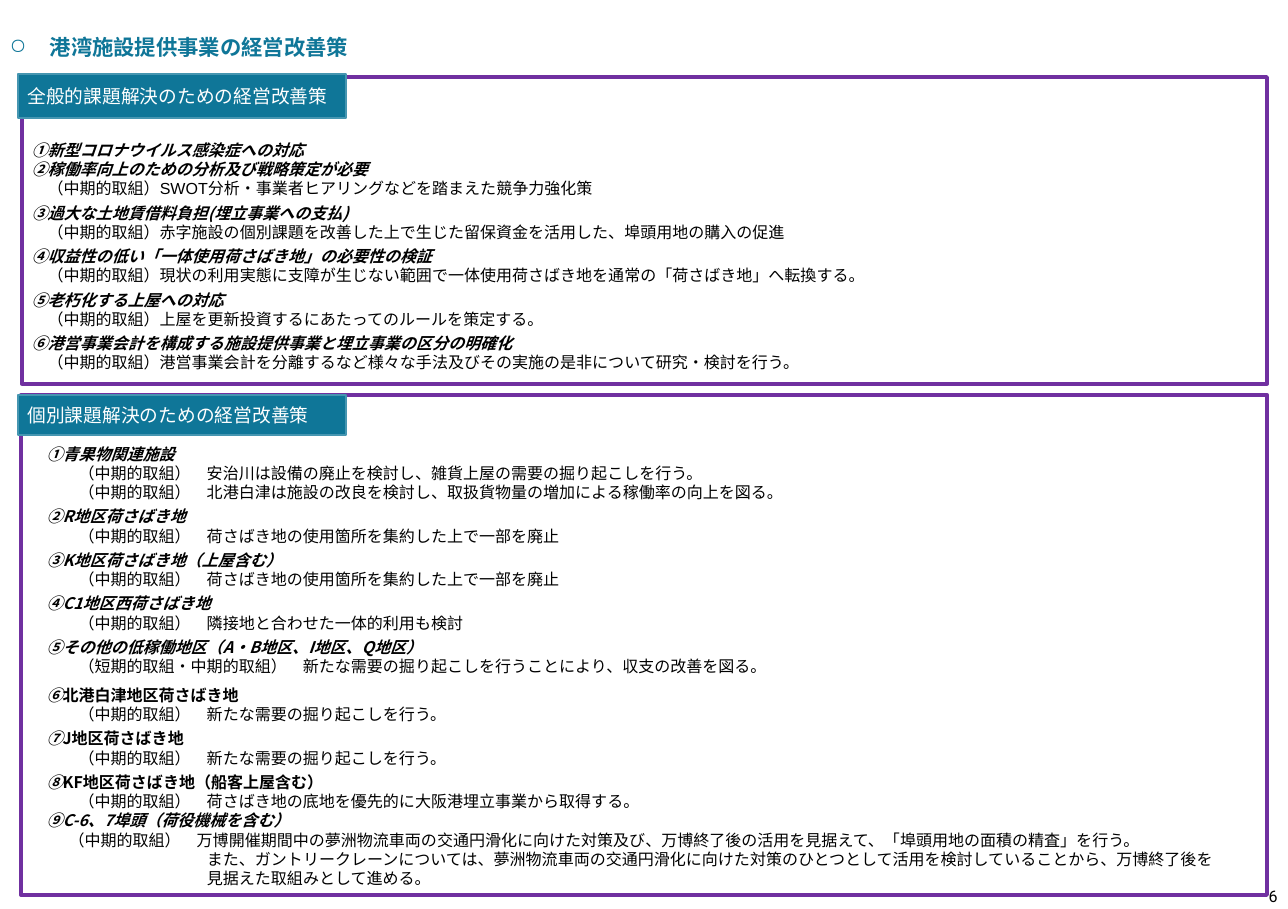
"""Build the slide on management measures for the port facility business."""
from dataclasses import dataclass

from lxml import etree
from pptx import Presentation
from pptx import util as u
from pptx.dml.color import RGBColor
from pptx.enum import shapes, text
from pptx.oxml import ns


@dataclass(frozen=True)
class Theme:
    teal: str = "0F7698"
    edge: str = "4696B1"
    frame: str = "7030A0"
    ink: str = "000000"
    white: str = "FFFFFF"
    head: str = "Roboto"
    body: str = "Arial"
    asian: str = "Noto Sans CJK JP"
    title: int = 16
    label: int = 14
    small: int = 12
    pitch: float = 14.45
    gap: float = 3.6


@dataclass(frozen=True)
class Kind:
    bold: bool = False
    slant: bool = False
    gaps: int = 0
    left: str = "act"


KINDS = {
    "item": Kind(True, True, 1, "item"),
    "next": Kind(True, True, 0, "item"),
    "plain": Kind(True, False, 1, "item"),
    "part": Kind(True, False, 2, "item"),
    "act": Kind(),
    "last": Kind(left="last"),
    "more": Kind(left="more"),
}

GENERAL = [
    ("next", "①新型コロナウイルス感染症への対応"),
    ("next", "②稼働率向上のための分析及び戦略策定が必要"),
    ("act", "（中期的取組）SWOT分析・事業者ヒアリングなどを踏まえた競争力強化策"),
    ("item", "③過大な土地賃借料負担(埋立事業への支払)"),
    ("act", "（中期的取組）赤字施設の個別課題を改善した上で生じた留保資金を活用した、埠頭用地の購入の促進"),
    ("item", "④収益性の低い「一体使用荷さばき地」の必要性の検証"),
    ("act", "（中期的取組）現状の利用実態に支障が生じない範囲で一体使用荷さばき地を通常の「荷さばき地」へ転換する。"),
    ("item", "⑤老朽化する上屋への対応"),
    ("act", "（中期的取組）上屋を更新投資するにあたってのルールを策定する。"),
    ("item", "⑥港営事業会計を構成する施設提供事業と埋立事業の区分の明確化"),
    ("act", "（中期的取組）港営事業会計を分離するなど様々な手法及びその実施の是非について研究・検討を行う。"),
]

SINGLE = [
    ("next", "①青果物関連施設"),
    ("act", "（中期的取組）　安治川は設備の廃止を検討し、雑貨上屋の需要の掘り起こしを行う。"),
    ("act", "（中期的取組）　北港白津は施設の改良を検討し、取扱貨物量の増加による稼働率の向上を図る。"),
    ("item", "②R地区荷さばき地"),
    ("act", "（中期的取組）　荷さばき地の使用箇所を集約した上で一部を廃止"),
    ("item", "③K地区荷さばき地（上屋含む）"),
    ("act", "（中期的取組）　荷さばき地の使用箇所を集約した上で一部を廃止"),
    ("item", "④C1地区西荷さばき地"),
    ("act", "（中期的取組）　隣接地と合わせた一体的利用も検討"),
    ("item", "⑤その他の低稼働地区（A・B地区、I地区、Q地区）"),
    ("act", "（短期的取組・中期的取組）　新たな需要の掘り起こしを行うことにより、収支の改善を図る。"),
    ("part", "⑥北港白津地区荷さばき地"),
    ("act", "（中期的取組）　新たな需要の掘り起こしを行う。"),
    ("plain", "⑦J地区荷さばき地"),
    ("act", "（中期的取組）　新たな需要の掘り起こしを行う。"),
    ("plain", "⑧KF地区荷さばき地（船客上屋含む）"),
    ("act", "（中期的取組）　荷さばき地の底地を優先的に大阪港埋立事業から取得する。"),
    ("next", "⑨C-6、7埠頭（荷役機械を含む）"),
    ("last", "（中期的取組）　万博開催期間中の夢洲物流車両の交通円滑化に向けた対策及び、万博終了後の活用を見据えて、"
             "「埠頭用地の面積の精査」を行う。"),
    ("more", "また、ガントリークレーンについては、夢洲物流車両の交通円滑化に向けた対策のひとつとして"
             "活用を検討していることから、万博終了後を"),
    ("more", "見据えた取組みとして進める。"),
]


def px(n):
    return u.Emu(n * 9525)


class Board:
    """Draw the parts of one slide in one style."""

    def __init__(self, slide, theme):
        self.slide, self.theme = slide, theme

    def style(self, para, face, size, color, bold=False):
        font = para.font
        font.name, font.size, font.bold = face, u.Pt(size), bold
        font.color.rgb = RGBColor.from_string(color)
        base = para._p.pPr.find(ns.qn("a:defRPr"))
        etree.SubElement(base, ns.qn("a:ea")).set("typeface", self.theme.asian)
        return base

    def title(self, words, *box):
        t = self.theme
        shape = self.slide.shapes.title
        shape.left, shape.top, shape.width, shape.height = map(px, box)
        frame = shape.text_frame
        frame.text = words
        frame.auto_size = text.MSO_AUTO_SIZE.NONE
        frame.vertical_anchor = text.MSO_ANCHOR.MIDDLE
        para = frame.paragraphs[0]
        para.alignment = text.PP_ALIGN.LEFT
        base = self.style(para, t.head, t.title, t.teal, True)
        self.indent(para, 40, -40)
        mark = etree.Element(ns.qn("a:buChar"))
        mark.set("char", "○")
        base.addprevious(mark)

    def indent(self, para, left, first=0):
        props = para._p.get_or_add_pPr()
        props.set("marL", str(px(left)))
        props.set("indent", str(px(first)))

    def rect(self, box, line, width, fill=None):
        shape = self.slide.shapes.add_shape(
            shapes.MSO_SHAPE.RECTANGLE, *map(px, box))
        shape.shadow.inherit = False
        shape.line.color.rgb = RGBColor.from_string(line)
        shape.line.width = u.Pt(width)
        if fill:
            shape.fill.solid()
            shape.fill.fore_color.rgb = RGBColor.from_string(fill)
        else:
            shape.fill.background()
        return shape

    def panel(self, rows, box, top, left):
        t = self.theme
        frame = self.rect(box, t.frame, 3).text_frame
        frame.word_wrap = True
        frame.vertical_anchor = text.MSO_ANCHOR.TOP
        frame.margin_top = px(top)
        for i, (name, words) in enumerate(rows):
            kind = KINDS[name]
            para = frame.add_paragraph() if i else frame.paragraphs[0]
            para.alignment = text.PP_ALIGN.JUSTIFY
            para.line_spacing = u.Pt(t.pitch)
            para.space_before = u.Pt(kind.gaps * t.gap)
            self.indent(para, left[kind.left])
            face = t.asian if kind.bold else t.body
            self.style(para, face, t.small, t.ink, kind.bold)
            if kind.bold and not kind.slant:
                mark = para.add_run()
                mark.text, mark.font.italic = words[0], True
                para.add_run().text = words[1:]
            else:
                para.add_run().text = words
                para.font.italic = kind.slant

    def label(self, words, *box):
        t = self.theme
        frame = self.rect(box, t.edge, 1.5, t.teal).text_frame
        frame.text = words
        frame.word_wrap = True
        frame.vertical_anchor = text.MSO_ANCHOR.MIDDLE
        para = frame.paragraphs[0]
        para.alignment = text.PP_ALIGN.LEFT
        self.style(para, t.head, t.label, t.white)

    def number(self, words, *box):
        t = self.theme
        frame = self.slide.shapes.add_textbox(*map(px, box)).text_frame
        frame.text = words
        frame.word_wrap = True
        frame.vertical_anchor = text.MSO_ANCHOR.MIDDLE
        para = frame.paragraphs[0]
        para.alignment = text.PP_ALIGN.RIGHT
        self.style(para, t.head, t.small, t.ink)


def main():
    deck = Presentation()
    deck.slide_width, deck.slide_height = px(1285), px(907)
    board = Board(deck.slides.add_slide(deck.slide_layouts[5]), Theme())
    board.title("港湾施設提供事業の経営改善策", 0, 29, 1285, 36)
    board.panel(SINGLE, (21, 394, 1243, 499), 49,
                {"item": 16, "act": 48, "last": 38, "more": 176})
    board.panel(GENERAL, (22, 77, 1242, 306), 63, {"item": 0, "act": 16})
    board.label("全般的課題解決のための経営改善策", 18, 74, 327, 44)
    board.label("個別課題解決のための経営改善策", 18, 394, 327, 40)
    board.number("6", 1212, 881, 72, 26)
    deck.save("out.pptx")


if __name__ == "__main__":
    main()
